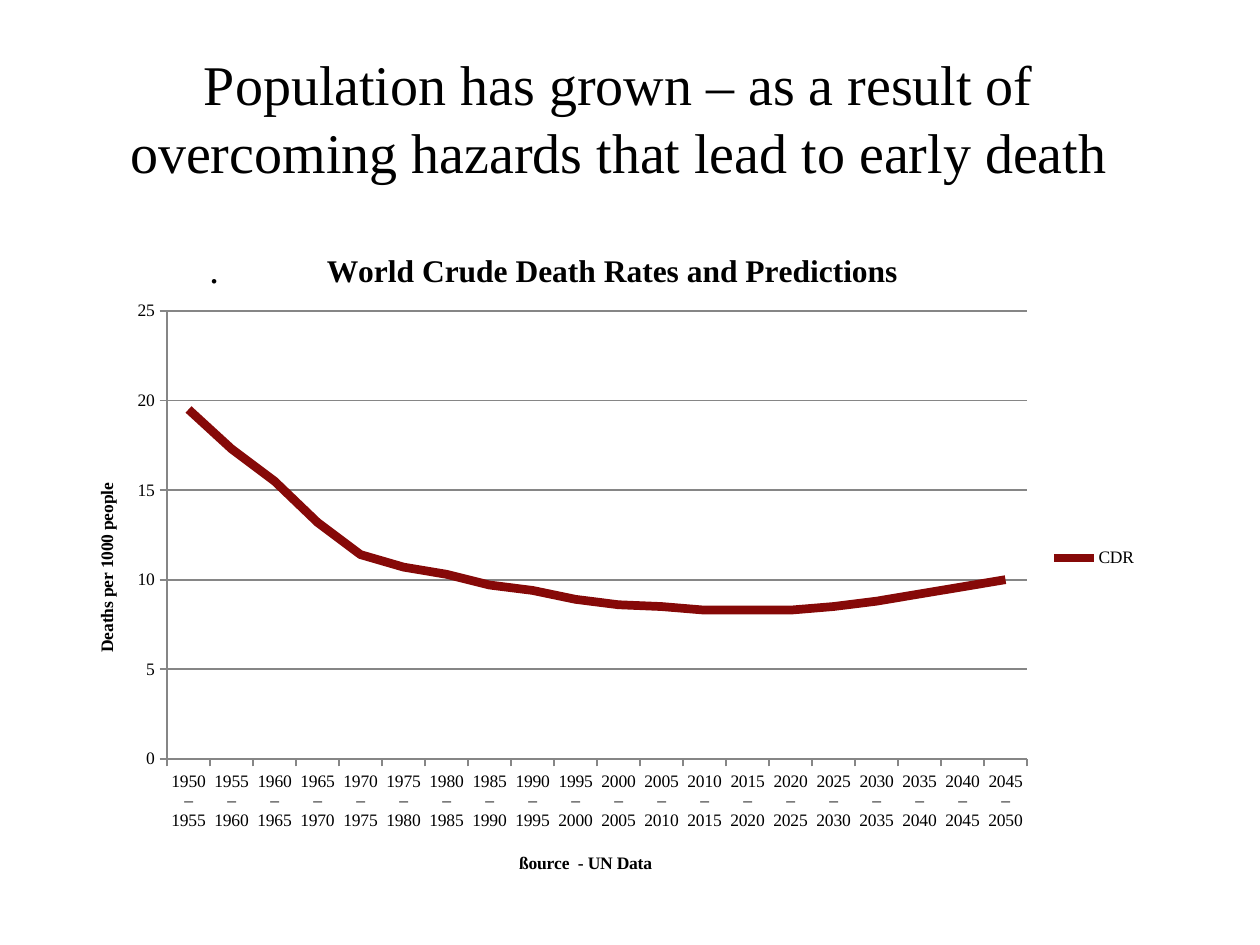
import dataclasses

import lxml.etree
import pptx
import pptx.chart.data
import pptx.dml.color
import pptx.enum.chart
import pptx.enum.text
import pptx.oxml.ns
import pptx.util

EMU_PER_PX = 914400 / 126
CHART_BOX = (63, 221, 1087, 674)
DEATH_RATES = [19.5, 17.3, 15.5, 13.2, 11.4, 10.7, 10.3, 9.7, 9.4, 8.9,
               8.6, 8.5, 8.3, 8.3, 8.3, 8.5, 8.8, 9.2, 9.6, 10]
PERIODS = [f"{year}–{year + 5}" for year in range(1950, 2050, 5)]


@dataclasses.dataclass(frozen=True)
class Theme:
    font: str = "Times New Roman"
    ink: str = "000000"
    grid: str = "868686"
    curve: str = "860908"
    title_size: int = 32
    body_size: int = 22
    chart_title_size: int = 18
    label_size: int = 10
    grid_width: int = 1
    curve_width: int = 5


def px(length):
    return pptx.util.Emu(round(length * EMU_PER_PX))


def color(value):
    return pptx.dml.color.RGBColor.from_string(value)


def set_attributes(target, values):
    for name, value in values.items():
        setattr(target, name, value)


class SlideBuilder:
    def __init__(self, slide, theme):
        self.slide = slide
        self.theme = theme

    def style_font(self, font, size, bold=False):
        set_attributes(font, {"name": self.theme.font, "bold": bold,
                              "size": pptx.util.Pt(size)})
        font.color.rgb = color(self.theme.ink)

    def style_line(self, line, value, width):
        line.color.rgb = color(value)
        line.width = pptx.util.Pt(width)

    def add_text(self, box, text, size, frame_values, indent=0):
        shape = self.slide.shapes.add_textbox(*map(px, box))
        set_attributes(shape.text_frame, {"word_wrap": True, **frame_values})
        paragraph = shape.text_frame.paragraphs[0]
        paragraph.text = text
        paragraph._p.get_or_add_pPr().set("marL", str(px(indent)))
        self.style_font(paragraph.font, size)
        return paragraph

    def place(self, element, index, left, top, width=None, height=None):
        """Fix a chart part at slide px, as fractions of the chart frame."""
        namespace = pptx.oxml.ns.nsdecls("c")
        for old in element.xpath("c:layout"):
            element.remove(old)
        chart_left, chart_top, chart_width, chart_height = CHART_BOX
        values = {"xMode": "edge", "yMode": "edge",
                  "x": round((left - chart_left) / chart_width, 4),
                  "y": round((top - chart_top) / chart_height, 4)}
        if width:
            values = {"layoutTarget": "inner", **values,
                      "w": round(width / chart_width, 4),
                      "h": round(height / chart_height, 4)}
        parts = "".join(f'<c:{tag} val="{value}"/>' for tag, value in values.items())
        element.insert(index, lxml.etree.fromstring(
            f"<c:layout {namespace}><c:manualLayout>{parts}</c:manualLayout></c:layout>"))

    def add_chart_heading(self, title, text, size, left, top):
        title.text_frame.text = text
        run = title.text_frame.paragraphs[0].runs[0]
        self.style_font(run.font, size, bold=True)
        self.place(title._element, 1, left, top)

    def style_axis(self, axis, heading, left, top):
        theme = self.theme
        set_attributes(axis, {
            "major_tick_mark": pptx.enum.chart.XL_TICK_MARK.OUTSIDE,
            "minor_tick_mark": pptx.enum.chart.XL_TICK_MARK.NONE})
        self.style_line(axis.format.line, theme.grid, theme.grid_width)
        self.style_font(axis.tick_labels.font, theme.label_size)
        self.add_chart_heading(axis.axis_title, heading, theme.label_size, left, top)

    def add_line_chart(self, name, categories, values):
        theme = self.theme
        data = pptx.chart.data.CategoryChartData()
        data.categories = categories
        data.add_series(name, values)
        chart = self.slide.shapes.add_chart(
            pptx.enum.chart.XL_CHART_TYPE.LINE, *map(px, CHART_BOX), data).chart
        self.style_font(chart.font, theme.label_size)
        self.place(chart._chartSpace.chart.plotArea, 0, 167, 311, 860, 448)

        # Series
        chart.plots[0].vary_by_categories = False
        series = chart.plots[0].series[0]
        series.smooth = False
        self.style_line(series.format.line, theme.curve, theme.curve_width)

        # Axes
        self.style_axis(chart.category_axis, "ßource  - UN Data", 516, 848)
        self.style_axis(chart.value_axis, "Deaths per 1000 people", 92, 480)
        set_attributes(chart.value_axis, {
            "minimum_scale": 0, "maximum_scale": 25, "major_unit": 5,
            "has_major_gridlines": True})
        self.style_line(chart.value_axis.major_gridlines.format.line,
                        theme.grid, theme.grid_width)

        # Heading and legend
        self.add_chart_heading(chart.chart_title, "World Crude Death Rates and Predictions",
                               theme.chart_title_size, 321, 245)
        chart.has_legend = True
        set_attributes(chart.legend, {
            "position": pptx.enum.chart.XL_LEGEND_POSITION.RIGHT,
            "include_in_layout": False})
        self.style_font(chart.legend.font, theme.label_size)


def main():
    presentation = pptx.Presentation()
    set_attributes(presentation, {"slide_width": px(1260), "slide_height": px(945)})
    theme = Theme()
    builder = SlideBuilder(
        presentation.slides.add_slide(presentation.slide_layouts[6]), theme)

    # Title
    title = builder.add_text(
        (52, 38, 1134, 158),
        "Population has grown – as a result of overcoming hazards that lead to early death",
        theme.title_size, {"vertical_anchor": pptx.enum.text.MSO_ANCHOR.MIDDLE})
    title.alignment = pptx.enum.text.PP_ALIGN.CENTER

    # Body
    builder.add_text((126, 239, 1008, 559), ".", theme.body_size,
                     {"vertical_anchor": pptx.enum.text.MSO_ANCHOR.TOP}, indent=71)

    # Death rate chart
    builder.add_line_chart("CDR", PERIODS, DEATH_RATES)

    presentation.save("out.pptx")


if __name__ == "__main__":
    main()
